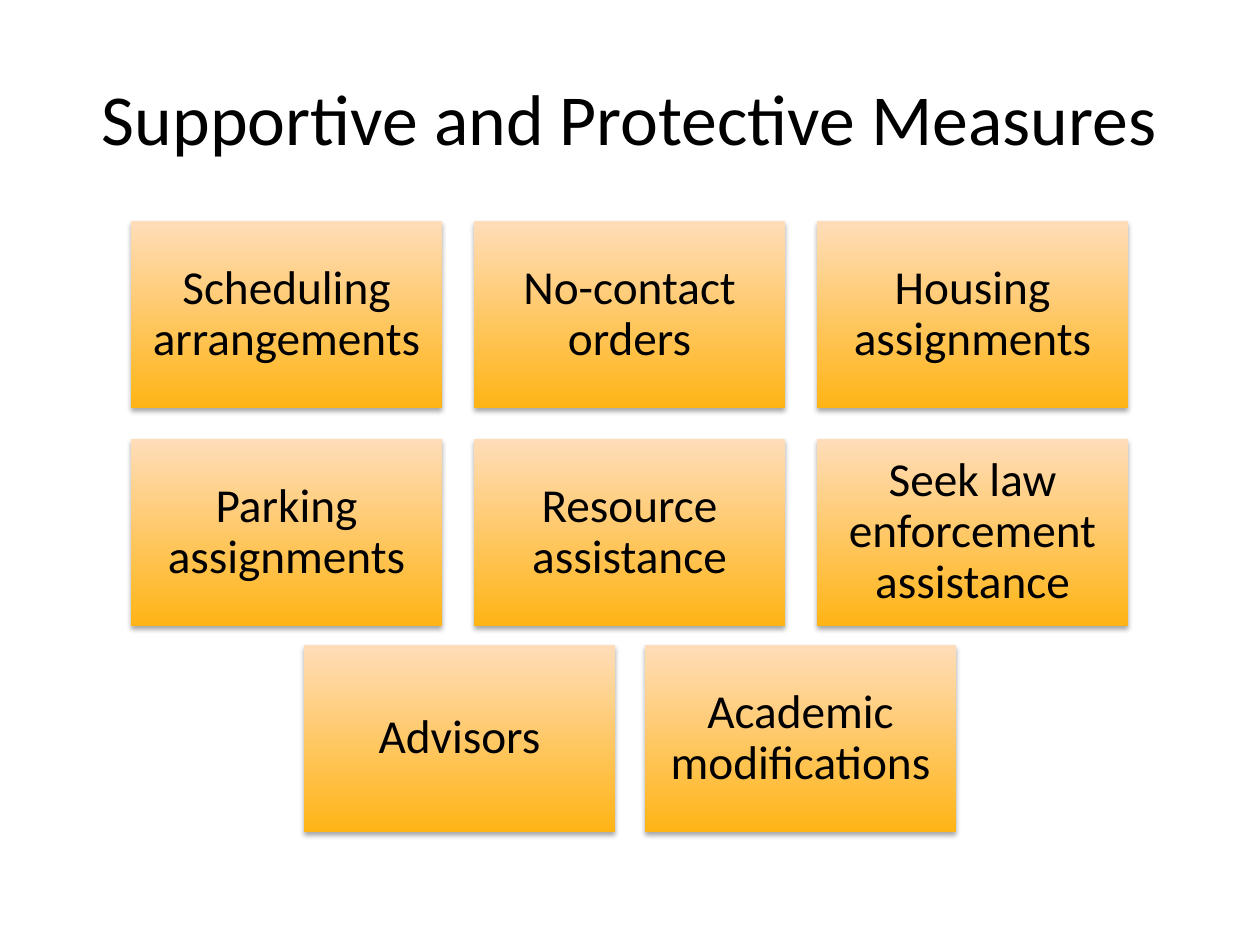
"""Build the slide of supportive and protective measures."""
from lxml.etree import SubElement
from pptx import Presentation
from pptx.dml.color import RGBColor
from pptx.enum.shapes import MSO_SHAPE
from pptx.enum.text import MSO_ANCHOR, PP_ALIGN
from pptx.oxml.ns import qn
from pptx.util import Emu, Pt

TITLE = "Supportive and Protective Measures"
ROWS = [
    {"top": 221, "pitch": 343, "measures": [
        "Scheduling arrangements", "No-contact orders", "Housing assignments"]},
    {"top": 439, "pitch": 343, "measures": [
        "Parking assignments", "Resource assistance", "Seek law enforcement assistance"]},
    {"top": 645, "pitch": 341, "measures": ["Advisors", "Academic modifications"]},
]
COLORS = {"text": "000000", "bottom": "FFB416", "top": "FFDDB9", "shadow": "000000"}
FONT = "Calibri"
SLIDE_WIDTH, SLIDE_HEIGHT = 1260, 945
BOX_WIDTH, BOX_HEIGHT, INSET = 311, 187, 14


def px(length):
    return Emu(round(length * 914400 / 126))


def color(name):
    return RGBColor.from_string(COLORS[name])


def write(shape, text, size):
    frame = shape.text_frame
    frame.word_wrap = True
    frame.vertical_anchor = MSO_ANCHOR.MIDDLE
    paragraph = frame.paragraphs[0]
    paragraph.alignment = PP_ALIGN.CENTER
    run = paragraph.add_run()
    run.text = text
    run.font.name = FONT
    run.font.size = Pt(size)
    run.font.color.rgb = color("text")
    return frame


def add_shadow(shape):
    shape.shadow.inherit = False
    effects = shape._element.spPr.find(qn("a:effectLst"))
    shadow = SubElement(effects, qn("a:outerShdw"), blurRad=str(Pt(3.1)),
                        dist=str(Pt(1.8)), dir="5400000", rotWithShape="0")
    tint = SubElement(shadow, qn("a:srgbClr"), val=COLORS["shadow"])
    SubElement(tint, qn("a:alpha"), val="35000")


def add_measure(slide, left, top, text):
    box = slide.shapes.add_shape(MSO_SHAPE.RECTANGLE, px(left), px(top),
                                 px(BOX_WIDTH), px(BOX_HEIGHT))
    box.fill.gradient()
    box.fill.gradient_angle = 90
    for stop, name in zip(box.fill.gradient_stops, ("bottom", "top")):
        stop.color.rgb = color(name)
    box.line.fill.background()
    add_shadow(box)
    frame = write(box, text, 27)
    frame.margin_left = frame.margin_right = px(INSET)
    frame.margin_top = frame.margin_bottom = px(INSET)
    frame.paragraphs[0].line_spacing = 0.9


def main():
    presentation = Presentation()
    presentation.slide_width = px(SLIDE_WIDTH)
    presentation.slide_height = px(SLIDE_HEIGHT)
    slide = presentation.slides.add_slide(presentation.slide_layouts[5])

    title = slide.shapes.title
    title.left, title.top, title.width, title.height = map(px, (63, 38, 1134, 157))
    write(title, TITLE, 41)

    for row in ROWS:
        measures, pitch = row["measures"], row["pitch"]
        row_width = BOX_WIDTH + pitch * (len(measures) - 1)
        left = (SLIDE_WIDTH - row_width) // 2
        for column, measure in enumerate(measures):
            add_measure(slide, left + column * pitch, row["top"], measure)

    presentation.save("out.pptx")


if __name__ == "__main__":
    main()
